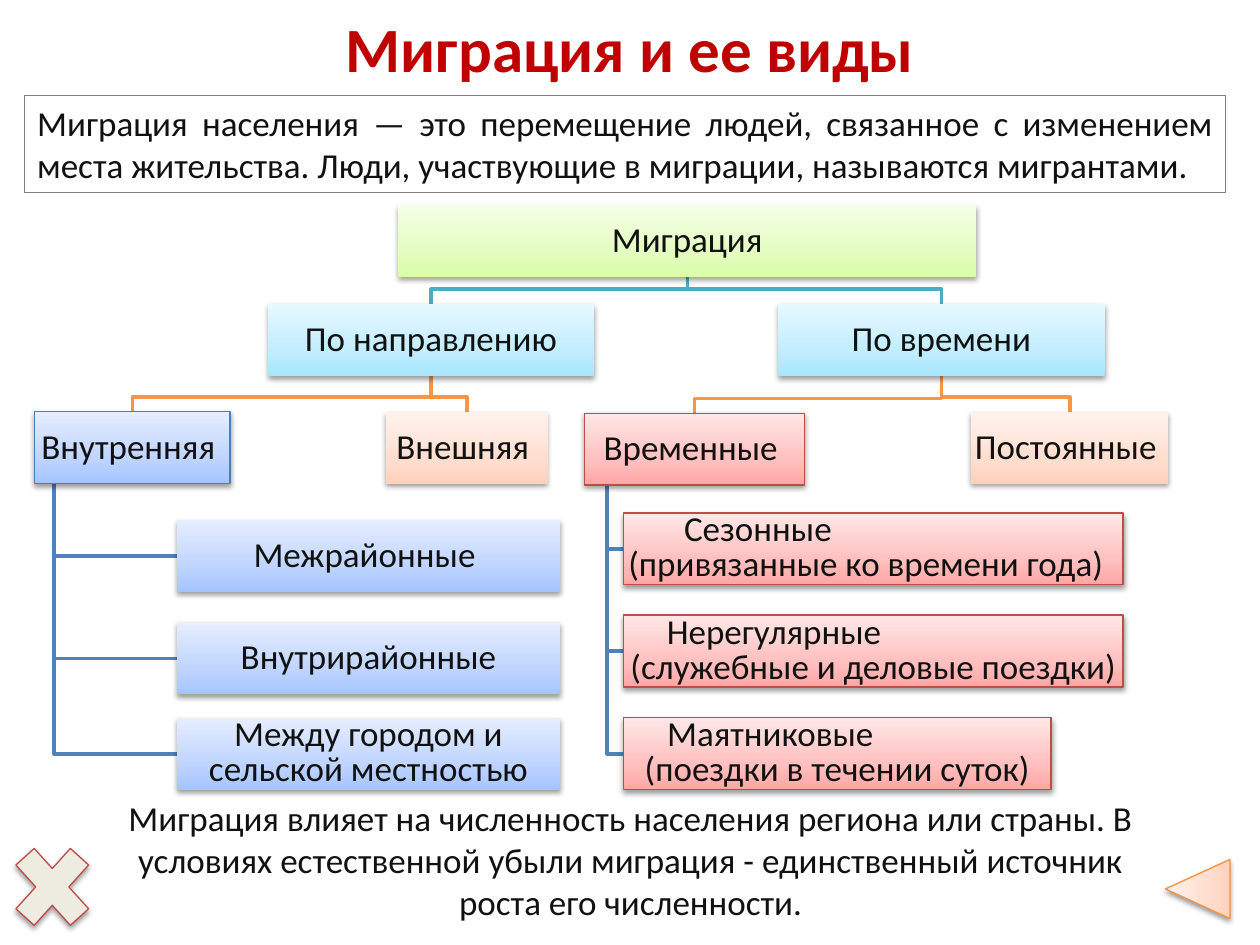
from dataclasses import dataclass
from typing import Optional

from lxml.etree import SubElement
from pptx import Presentation
from pptx.dml.color import RGBColor
from pptx.enum.shapes import MSO_SHAPE as Preset
from pptx.enum.text import MSO_ANCHOR as Anchor, MSO_AUTO_SIZE as AutoSize, PP_ALIGN as Align
from pptx.oxml.ns import qn
from pptx.util import Cm, Pt

INK = "111111"
GREEN = ("DAFDA7", "E4FCC2", "F5FFE7")
CYAN = ("A7E6FF", "C1EDFF", "E7F8FF")
BLUE = ("A4C4FF", "BFD4FF", "E6EEFF")
RED = ("FFA6A5", "FFC0BF", "FFE7E7")
PEACH = ("FFD2BD", "FFDED0", "FFF2ED")
BLUE_EDGE, RED_EDGE, ORANGE_EDGE = "4B7EBC", "BF4C48", "F69240"
LINK_TEAL, LINK_ORANGE, LINK_BLUE = "4BACC6", "F79646", "4F81BD"
NODE_HEIGHT = 1.45
BODY_FONT = {"name": "Calibri", "size": Pt(20), "bold": False}
TITLE_FONT = {"name": "Calibri", "size": Pt(36), "bold": True}
NODE_FRAME = {
    "word_wrap": True,
    "vertical_anchor": Anchor.MIDDLE,
    **{f"margin_{side}": Cm(0.03) for side in ("left", "right", "top", "bottom")},
}
PASSAGE_FRAME = {"word_wrap": True, "auto_size": AutoSize.SHAPE_TO_FIT_TEXT}
TITLE_FRAME = {"vertical_anchor": Anchor.MIDDLE, "auto_size": AutoSize.NONE}


@dataclass(frozen=True)
class Label:
    text: str
    right_indent: float = 0


@dataclass(frozen=True)
class Node:
    labels: tuple[Label, ...]
    left: float
    top: float
    width: float
    shades: tuple[str, str, str]
    edge: Optional[str] = None
    spacing: object = 0.9

    @property
    def center(self) -> float:
        return self.left + self.width / 2

    @property
    def middle(self) -> float:
        return self.top + NODE_HEIGHT / 2

    @property
    def bottom(self) -> float:
        return self.top + NODE_HEIGHT


@dataclass(frozen=True)
class Branch:
    parent: Node
    children: tuple[Node, ...]
    color: str
    hanging: bool = False


def paint(target, color: str) -> None:
    target.rgb = RGBColor.from_string(color)


def apply(target, values: dict) -> None:
    for name, value in values.items():
        setattr(target, name, value)


def write(frame, labels, font: dict, color: str, align, spacing=None) -> None:
    for index, label in enumerate(labels):
        paragraph = frame.paragraphs[0] if index == 0 else frame.add_paragraph()
        apply(paragraph, {"alignment": align, "line_spacing": spacing})
        paragraph._p.get_or_add_pPr().set("marR", str(Cm(label.right_indent)))
        run = paragraph.add_run()
        run.text = label.text
        apply(run.font, font)
        paint(run.font.color, color)


def set_gradient(shape, shades) -> None:
    shape.fill.gradient()
    gradient = shape._element.spPr.find(qn("a:gradFill"))
    stops = gradient.find(qn("a:gsLst"))
    for stop in list(stops):
        stops.remove(stop)
    for position, shade in zip((0, 35000, 100000), shades):
        stop = SubElement(stops, qn("a:gs"), pos=str(position))
        SubElement(stop, qn("a:srgbClr"), val=shade)
    gradient.find(qn("a:lin")).set("ang", "16200000")


def set_edge(shape, color: Optional[str], width: float = 0.75) -> None:
    if color is None:
        shape.line.fill.background()
        return
    paint(shape.line.color, color)
    shape.line.width = Pt(width)


def add_shadow(shape) -> None:
    shape.shadow.inherit = False
    effects = shape._element.spPr.find(qn("a:effectLst"))
    shadow = SubElement(effects, qn("a:outerShdw"), blurRad=str(Pt(3.1)),
                        dist=str(Pt(1.6)), dir="5400000", rotWithShape="0")
    black = SubElement(shadow, qn("a:srgbClr"), val="000000")
    SubElement(black, qn("a:alpha"), val="38000")


def draw_shape(slide, preset, box, edge: Optional[str], shades):
    shape = slide.shapes.add_shape(preset, *map(Cm, box))
    if len(shades) == 1:
        shape.fill.solid()
        paint(shape.fill.fore_color, shades[0])
    else:
        set_gradient(shape, shades)
    set_edge(shape, edge)
    add_shadow(shape)
    return shape


def draw_node(slide, node: Node) -> None:
    box = (node.left, node.top, node.width, NODE_HEIGHT)
    frame = draw_shape(slide, Preset.RECTANGLE, box, node.edge, node.shades).text_frame
    apply(frame, NODE_FRAME)
    write(frame, node.labels, BODY_FONT, INK, Align.CENTER, node.spacing)


def draw_link(slide, points, color: str) -> None:
    start, *rest = [(Cm(x), Cm(y)) for x, y in points]
    builder = slide.shapes.build_freeform(*start)
    builder.add_line_segments(rest, close=False)
    link = builder.convert_to_shape()
    link.fill.background()
    link.shadow.inherit = False
    set_edge(link, color, 2)


def draw_branch(slide, branch: Branch) -> None:
    parent = branch.parent
    for child in branch.children:
        if branch.hanging:
            trunk = parent.left + parent.width / 10
            points = [(trunk, parent.bottom), (trunk, child.middle), (child.left, child.middle)]
        else:
            turn = child.top - 0.3
            points = [(parent.center, parent.bottom), (parent.center, turn),
                      (child.center, turn), (child.center, child.top)]
        draw_link(slide, points, branch.color)


def draw_passage(slide, box, text: str, align, edge: Optional[str] = None) -> None:
    passage = slide.shapes.add_textbox(*map(Cm, box))
    set_edge(passage, edge)
    apply(passage.text_frame, PASSAGE_FRAME)
    write(passage.text_frame, [Label(text)], BODY_FONT, INK, align)


def main() -> None:
    deck = Presentation()
    apply(deck, {"slide_width": Cm(25.4), "slide_height": Cm(19.05)})
    slide = deck.slides.add_slide(deck.slide_layouts[5])

    title = slide.shapes.title
    apply(title, {"left": Cm(1.27), "top": Cm(0), "width": Cm(22.86), "height": Cm(1.92)})
    apply(title.text_frame, TITLE_FRAME)
    write(title.text_frame, [Label("Миграция и ее виды")], TITLE_FONT, "C00000", Align.CENTER)

    cross = draw_shape(slide, Preset.MATH_MULTIPLY, (0, 16.71, 2.11, 2.34), RED_EDGE, ("EEECE1",))
    cross.adjustments[0] = 0.235
    back = draw_shape(slide, Preset.ISOSCELES_TRIANGLE, (23.55, 17.27, 1.19, 1.3), ORANGE_EDGE, PEACH)
    back.rotation = 270

    draw_passage(slide, (0.5, 1.92, 24.21, 1.96),
                 "Миграция населения — это перемещение людей, связанное с изменением места жительства. "
                 "Люди, участвующие в миграции, называются мигрантами.", Align.JUSTIFY, "808080")

    root = Node((Label("Миграция"),), 8.03, 4.13, 11.65, GREEN)
    direction = Node((Label("По направлению"),), 5.4, 6.13, 6.58, CYAN)
    duration = Node((Label("По времени"),), 15.69, 6.13, 6.58, CYAN)
    internal = Node((Label("Внутренняя", 0.16),), 0.7, 8.3, 3.94, BLUE, BLUE_EDGE)
    external = Node((Label("Внешняя", 0.16),), 7.78, 8.3, 3.26, PEACH)
    temporary = Node((Label("Временные", 0.16),), 11.79, 8.33, 4.43, RED, RED_EDGE)
    permanent = Node((Label("Постоянные", 0.16),), 19.58, 8.3, 3.97, PEACH)
    internal_kinds = tuple(
        Node((label,), 3.57, top, 7.72, BLUE, spacing=spacing)
        for label, top, spacing in (
            (Label("Межрайонные", 0.16), 10.48, 0.9),
            (Label("Внутрирайонные"), 12.55, 0.9),
            (Label("Между городом и сельской местностью"), 14.47, Pt(20)),
        ))
    temporary_kinds = tuple(
        Node(labels, 12.57, top, width, RED, RED_EDGE, Pt(20))
        for labels, top, width in (
            ((Label("Сезонные", 4.65), Label("(привязанные ко времени года)", 0.3)), 10.34, 10.07),
            ((Label("Нерегулярные", 4), Label("(служебные и деловые поездки)")), 12.4, 10.07),
            ((Label("Маятниковые", 2.7), Label("(поездки в течении суток)")), 14.47, 8.62),
        ))

    branches = (
        Branch(duration, (permanent, temporary), LINK_ORANGE),
        Branch(temporary, temporary_kinds, LINK_BLUE, hanging=True),
        Branch(direction, (external, internal), LINK_ORANGE),
        Branch(internal, internal_kinds, LINK_BLUE, hanging=True),
        Branch(root, (duration, direction), LINK_TEAL),
    )
    for branch in branches:
        draw_branch(slide, branch)
    for node in (root, direction, internal, *internal_kinds, external,
                 duration, temporary, *temporary_kinds, permanent):
        draw_node(slide, node)

    draw_passage(slide, (2.11, 15.93, 21.21, 2.82),
                 "Миграция влияет на численность населения региона или страны. В условиях естественной "
                 "убыли миграция - единственный источник роста его численности.", Align.CENTER)
    deck.save("out.pptx")


if __name__ == "__main__":
    main()
